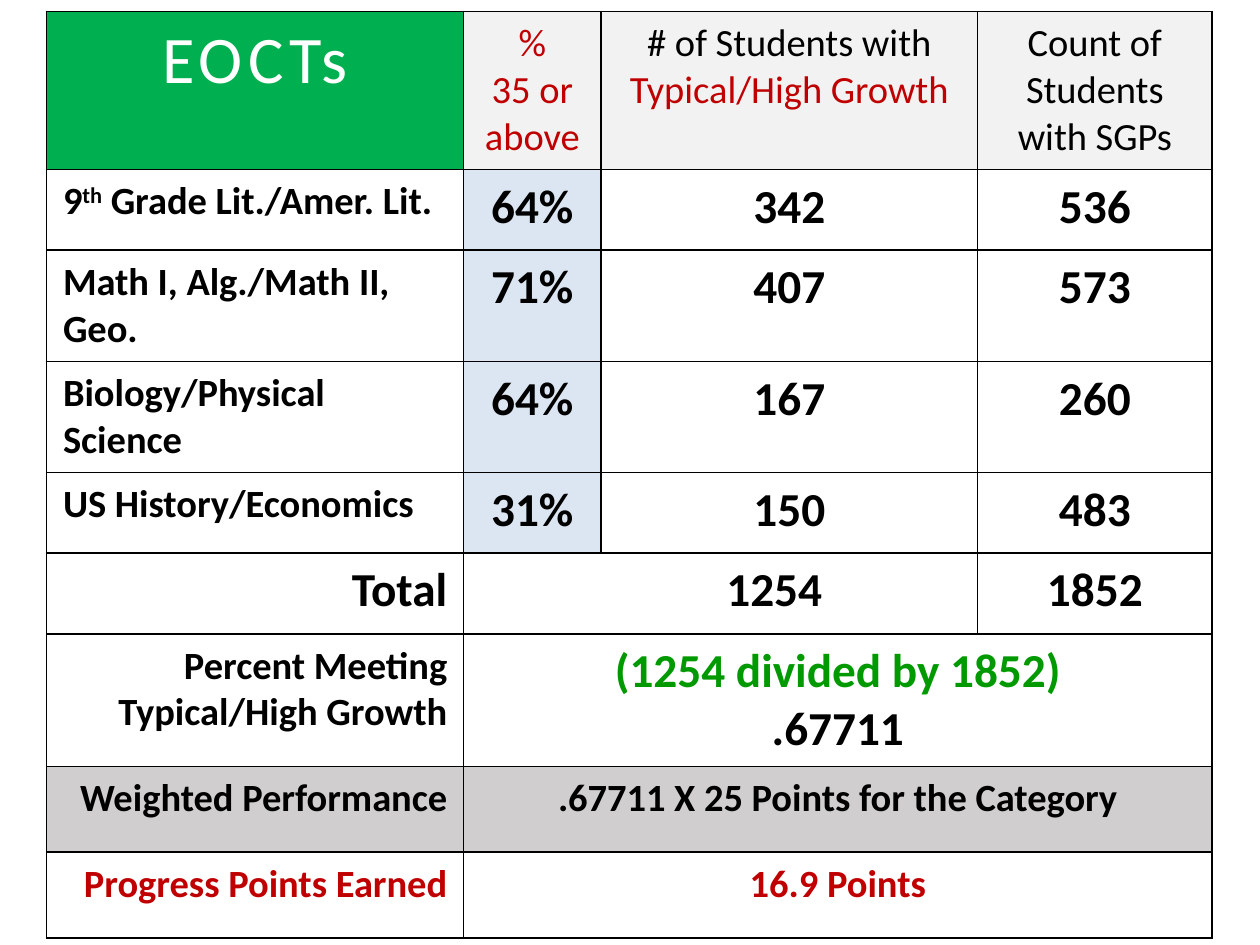
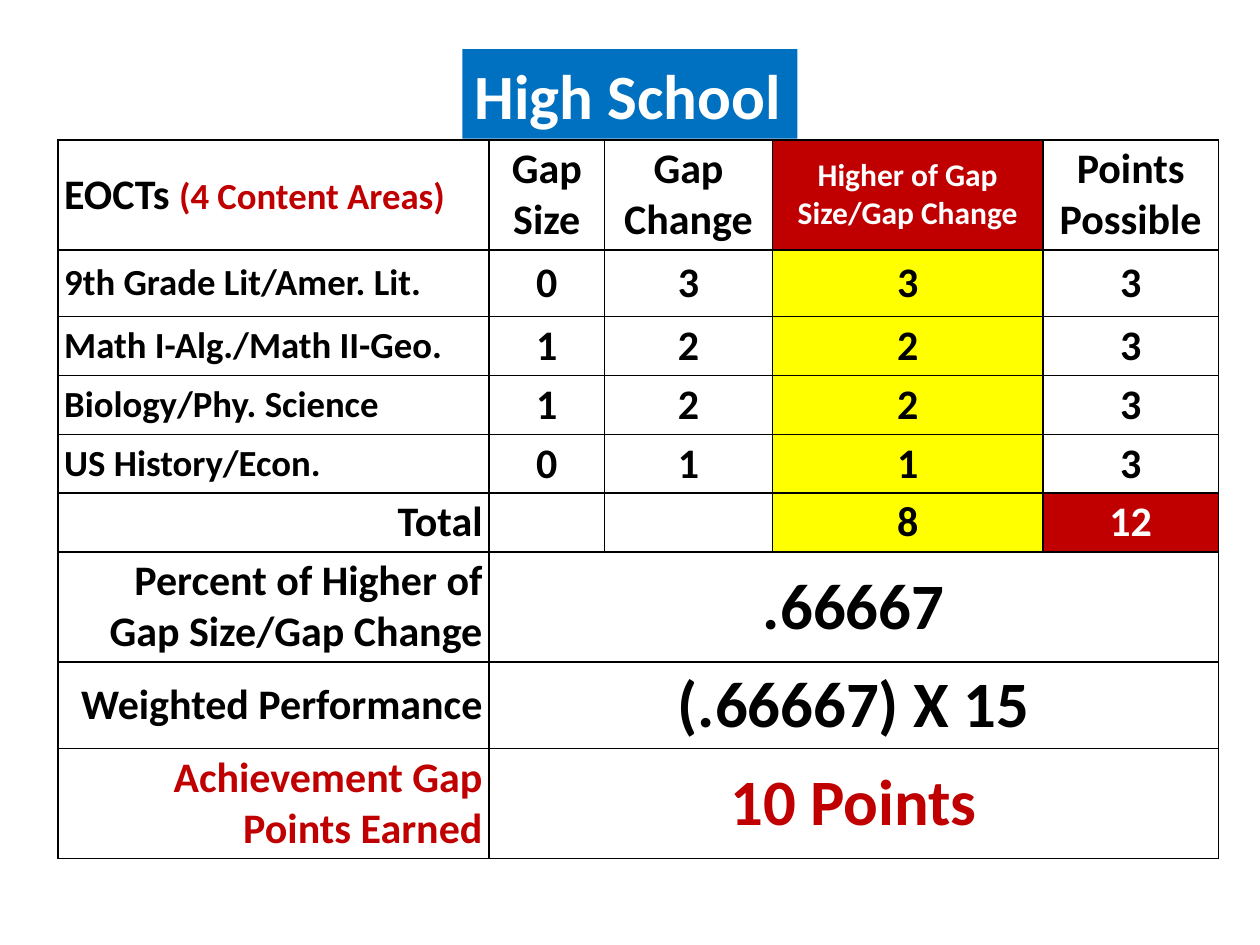
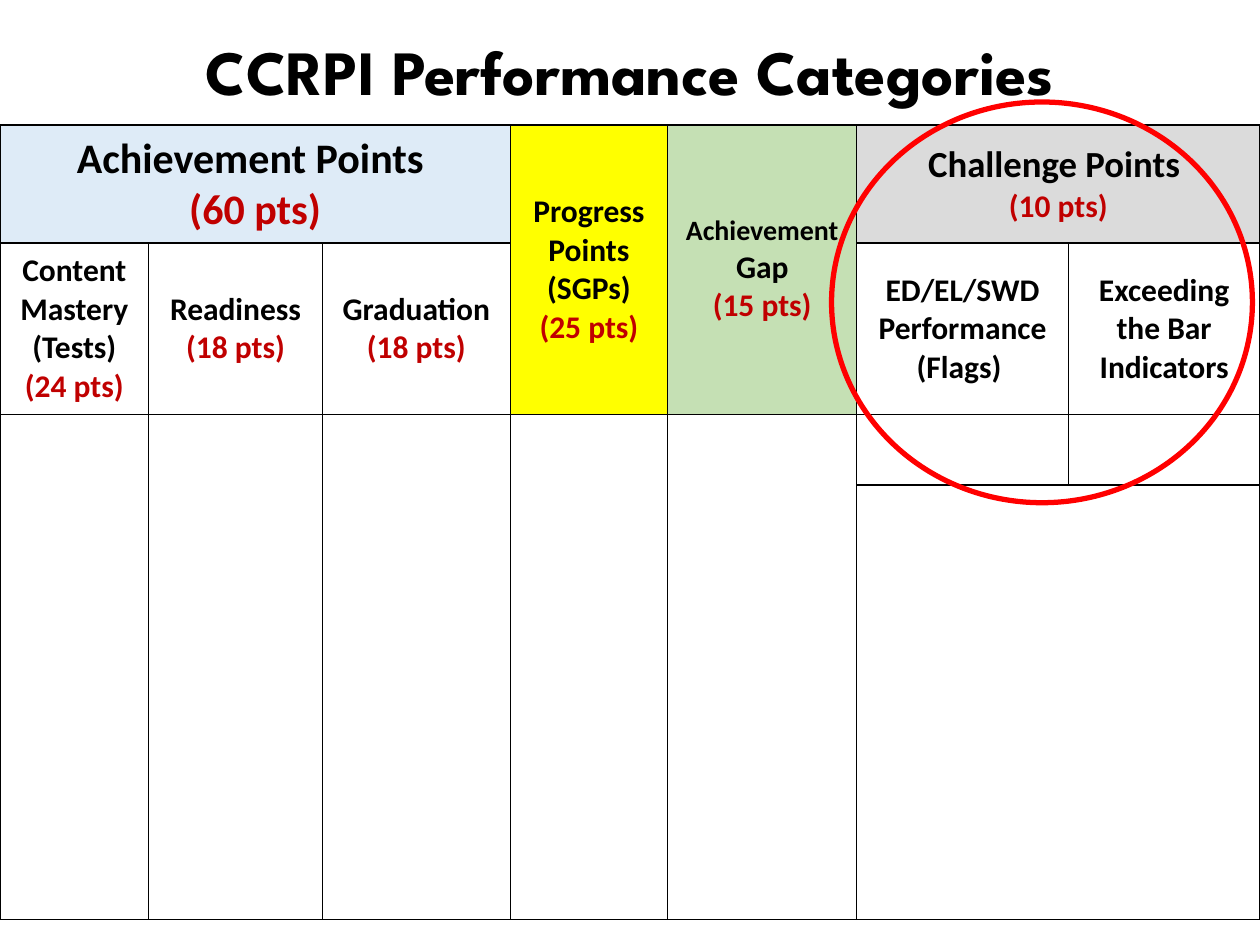
from lxml import etree
from pptx import Presentation
from pptx.dml.color import RGBColor
from pptx.enum import shapes, text
from pptx.oxml.ns import qn
from pptx.util import Inches, Pt

BLACK = RGBColor(0x00, 0x00, 0x00)
WHITE = RGBColor(0xFF, 0xFF, 0xFF)
DARK_RED = RGBColor(0xC0, 0x00, 0x00)
RED = RGBColor(0xFF, 0x00, 0x00)
GREEN = RGBColor(0x00, 0xB0, 0x50)
TEXT_GREEN = RGBColor(0x00, 0x99, 0x00)
LEAF = RGBColor(0xC5, 0xE0, 0xB4)
YELLOW = RGBColor(0xFF, 0xFF, 0x00)
BLUE = RGBColor(0x00, 0x70, 0xC0)
PALE_BLUE = RGBColor(0xDC, 0xE6, 0xF2)
SKY = RGBColor(0xDE, 0xEB, 0xF7)
PALE_GRAY = RGBColor(0xF2, 0xF2, 0xF2)
GRAY = RGBColor(0xD0, 0xCE, 0xCE)
SILVER = RGBColor(0xDB, 0xDB, 0xDB)

LEFT, CENTER, RIGHT = text.PP_ALIGN.LEFT, text.PP_ALIGN.CENTER, text.PP_ALIGN.RIGHT
TOP, MIDDLE = text.MSO_ANCHOR.TOP, text.MSO_ANCHOR.MIDDLE


def add_table(s, left, top, cols, rows, margins, anchor):
    frame = s.shapes.add_table(len(rows), len(cols), Inches(left), Inches(top),
                               Inches(sum(cols)), Inches(sum(rows)))
    t = frame.table
    t.first_row = t.horz_banding = False
    for column, width in zip(t.columns, cols):
        column.width = Inches(width)
    for row, height in zip(t.rows, rows):
        row.height = Inches(height)
    for cell in t.iter_cells():
        cell.margin_left = cell.margin_right = Inches(margins[0])
        cell.margin_top = cell.margin_bottom = Inches(margins[1])
        cell.vertical_anchor = anchor
        tcPr = cell._tc.get_or_add_tcPr()
        for side in ("a:lnL", "a:lnR", "a:lnT", "a:lnB"):
            ln = etree.SubElement(tcPr, qn(side), w=str(Pt(1)))
            solid = etree.SubElement(ln, qn("a:solidFill"))
            etree.SubElement(solid, qn("a:srgbClr"), val=str(BLACK))
        cell.fill.background()
    return t


def write(box, lines, align=CENTER, fill=None, bold=True, font="Calibri"):
    tf = box.text_frame
    for i, runs in enumerate(lines):
        p = tf.add_paragraph() if i else tf.paragraphs[0]
        p.alignment = align
        p.font.name, p.font.bold = font, bold
        p.font.size, p.font.color.rgb = Pt(runs[0][1]), runs[0][2]
        for words, size, color in runs:
            r = p.add_run()
            r.text = words
            if (size, color) != runs[0][1:]:
                r.font.size, r.font.color.rgb = Pt(size), color
    if fill is not None:
        box.fill.solid()
        box.fill.fore_color.rgb = fill


prs = Presentation()
prs.slide_width, prs.slide_height = Inches(10), Inches(7.5)
blank = prs.slide_layouts[6]

s = prs.slides.add_slide(blank)
t = add_table(s, 0.37, 0.09, [3.31, 1.09, 2.99, 1.86],
              [1.23, 0.64, 0.86, 0.64, 0.64, 0.64, 1.05, 0.68, 0.68], (0.13, 0.07), TOP)
headers = [
    ([[("EOCTs", 38, WHITE)]], GREEN),
    ([[("%", 22, DARK_RED)], [("35 or above", 22, DARK_RED)]], PALE_GRAY),
    ([[("# of Students with ", 22, BLACK), ("Typical/High Growth", 22, DARK_RED)]], PALE_GRAY),
    ([[("Count of Students with SGPs", 22, BLACK)]], PALE_GRAY),
]
for c, (lines, fill) in enumerate(headers):
    write(t.cell(0, c), lines, fill=fill, bold=False)
t.cell(0, 0).text_frame.paragraphs[0].runs[0]._r.get_or_add_rPr().set("spc", "300")

subjects = [
    (["9", "th", " Grade Lit./Amer. Lit."], "64%", "342", "536"),
    (["Math I, Alg./Math II, Geo."], "71%", "407", "573"),
    (["Biology/Physical Science"], "64%", "167", "260"),
    (["US History/Economics"], "31%", "150", "483"),
]
for i, (name, *values) in enumerate(subjects, 1):
    write(t.cell(i, 0), [[(part, 22, BLACK) for part in name]], LEFT, WHITE)
    for c, value in enumerate(values, 1):
        write(t.cell(i, c), [[(value, 27, BLACK)]], fill=PALE_BLUE if c == 1 else WHITE)
t.cell(1, 0).text_frame.paragraphs[0].runs[1]._r.get_or_add_rPr().set("baseline", "30000")

summary = [
    ("Total", 27, BLACK, [[("1254", 27, BLACK)]], WHITE, 2),
    ("Percent Meeting Typical/High Growth", 22, BLACK,
     [[("(1254 divided by 1852)", 27, TEXT_GREEN)], [(".67711", 27, BLACK)]], WHITE, 3),
    ("Weighted Performance", 22, BLACK,
     [[(".67711 X 25 Points for the Category", 22, BLACK)]], GRAY, 3),
    ("Progress Points Earned", 22, DARK_RED, [[("16.9 Points", 22, DARK_RED)]], WHITE, 3),
]
for i, (label, size, color, lines, fill, last) in enumerate(summary, 5):
    write(t.cell(i, 0), [[(label, size, color)]], RIGHT, fill)
    t.cell(i, 1).merge(t.cell(i, last))
    write(t.cell(i, 1), lines, fill=fill)
t.cell(5, 1).margin_left = Inches(0.98)
write(t.cell(5, 3), [[("1852", 27, BLACK)]], fill=WHITE)

s = prs.slides.add_slide(blank)
t = add_table(s, 0.46, 1.11, [3.42, 0.92, 1.33, 2.15, 1.39],
              [0.84, 0.53, 0.45, 0.45, 0.45, 0.45, 0.84, 0.67, 0.84], (0.05, 0.03), MIDDLE)
write(t.cell(0, 0), [[("EOCTs ", 24, BLACK), ("(4 Content Areas)", 21, DARK_RED)]], LEFT)
headers = [
    ("Gap Size", 24, BLACK, None),
    ("Gap Change", 24, BLACK, None),
    ("Higher of Gap Size/Gap Change", 18, WHITE, DARK_RED),
    ("Points Possible", 24, BLACK, None),
]
for c, (*run, fill) in enumerate(headers, 1):
    write(t.cell(0, c), [[tuple(run)]], fill=fill)

subjects = [
    ("9th Grade Lit/Amer. Lit.", "0333"),
    ("Math I-Alg./Math II-Geo.", "1223"),
    ("Biology/Phy. Science", "1223"),
    ("US History/Econ.", "0113"),
]
for i, (name, points) in enumerate(subjects, 1):
    write(t.cell(i, 0), [[(name, 21, BLACK)]], LEFT)
    for c, value in enumerate(points, 1):
        write(t.cell(i, c), [[(value, 24, BLACK)]], fill=YELLOW if c == 3 else None)

write(t.cell(5, 0), [[("Total", 24, BLACK)]], RIGHT)
write(t.cell(5, 3), [[("8", 24, BLACK)]], fill=YELLOW)
write(t.cell(5, 4), [[("12", 24, WHITE)]], fill=DARK_RED)
summary = [
    ("Percent of Higher of Gap Size/Gap Change", ".66667", BLACK),
    ("Weighted Performance", "(.66667) X 15", BLACK),
    ("Achievement Gap Points Earned", "10 Points", DARK_RED),
]
for i, (label, value, color) in enumerate(summary, 6):
    write(t.cell(i, 0), [[(label, 24, color)]], RIGHT)
    t.cell(i, 1).merge(t.cell(i, 4))
    write(t.cell(i, 1), [[(value, 37, color)]])

sp = s.shapes.add_shape(shapes.MSO_SHAPE.RECTANGLE, Inches(3.67), Inches(0.39),
                        Inches(2.66), Inches(0.71))
sp.shadow.inherit = False
sp.line.fill.background()
sp.text_frame.word_wrap = False
sp.text_frame.auto_size = text.MSO_AUTO_SIZE.SHAPE_TO_FIT_TEXT
write(sp, [[("High School", 36, WHITE)]], LEFT, BLUE)

s = prs.slides.add_slide(blank)
t = add_table(s, 0, 0.99, [1.18, 1.38, 1.49, 1.25, 1.5, 1.68, 1.52],
              [0.92, 1.36, 0.56, 3.45], (0.13, 0.07), MIDDLE)
merges = [(0, 0, 0, 2), (0, 3, 1, 3), (0, 4, 1, 4), (0, 5, 0, 6), (3, 5, 3, 6)]
merges += [(2, c, 3, c) for c in range(5)]
for top, left, bottom, right in merges:
    t.cell(top, left).merge(t.cell(bottom, right))

categories = [
    (0, 0, SKY, [[("Achievement Points ", 24, BLACK)], [("(60 pts)", 24, DARK_RED)]]),
    (0, 3, YELLOW, [[("Progress Points", 18, BLACK)], [("(SGPs)", 18, BLACK)],
                    [("(25 pts)", 18, DARK_RED)]]),
    (0, 4, LEAF, [[("Achievement ", 16, BLACK), ("Gap", 18, BLACK)],
                  [("(15 pts)", 18, DARK_RED)]]),
    (0, 5, SILVER, [[("Challenge Points ", 21, BLACK)], [("(10 pts)", 18, DARK_RED)]]),
    (1, 0, WHITE, [[("Content", 18, BLACK)], [("Mastery", 18, BLACK)],
                   [("(Tests)", 18, BLACK)], [("(24 pts)", 18, DARK_RED)]]),
    (1, 1, WHITE, [[("Readiness", 18, BLACK)], [("(18 pts)", 18, DARK_RED)]]),
    (1, 2, WHITE, [[("Graduation", 18, BLACK)], [("(18 pts)", 18, DARK_RED)]]),
    (1, 5, WHITE, [[("ED/EL/SWD", 18, BLACK)], [("Performance", 18, BLACK)],
                   [("(Flags) ", 18, BLACK)]]),
    (1, 6, WHITE, [[("Exceeding the Bar Indicators", 18, BLACK)]]),
]
for row, col, fill, lines in categories:
    write(t.cell(row, col), lines, fill=fill)

sp = s.shapes.add_textbox(0, Inches(0.21), Inches(10), Inches(0.72))
sp.text_frame.word_wrap = True
sp.text_frame.auto_size = text.MSO_AUTO_SIZE.SHAPE_TO_FIT_TEXT
write(sp, [[("CCRPI Performance Categories", 36, BLACK)]], font="League Spartan")

sp = s.shapes.add_shape(shapes.MSO_SHAPE.OVAL, Inches(6.6), Inches(0.81),
                        Inches(3.34), Inches(3.18))
sp.shadow.inherit = False
sp.fill.background()
sp.line.color.rgb = RED
sp.line.width = Pt(3)

prs.save("out.pptx")
